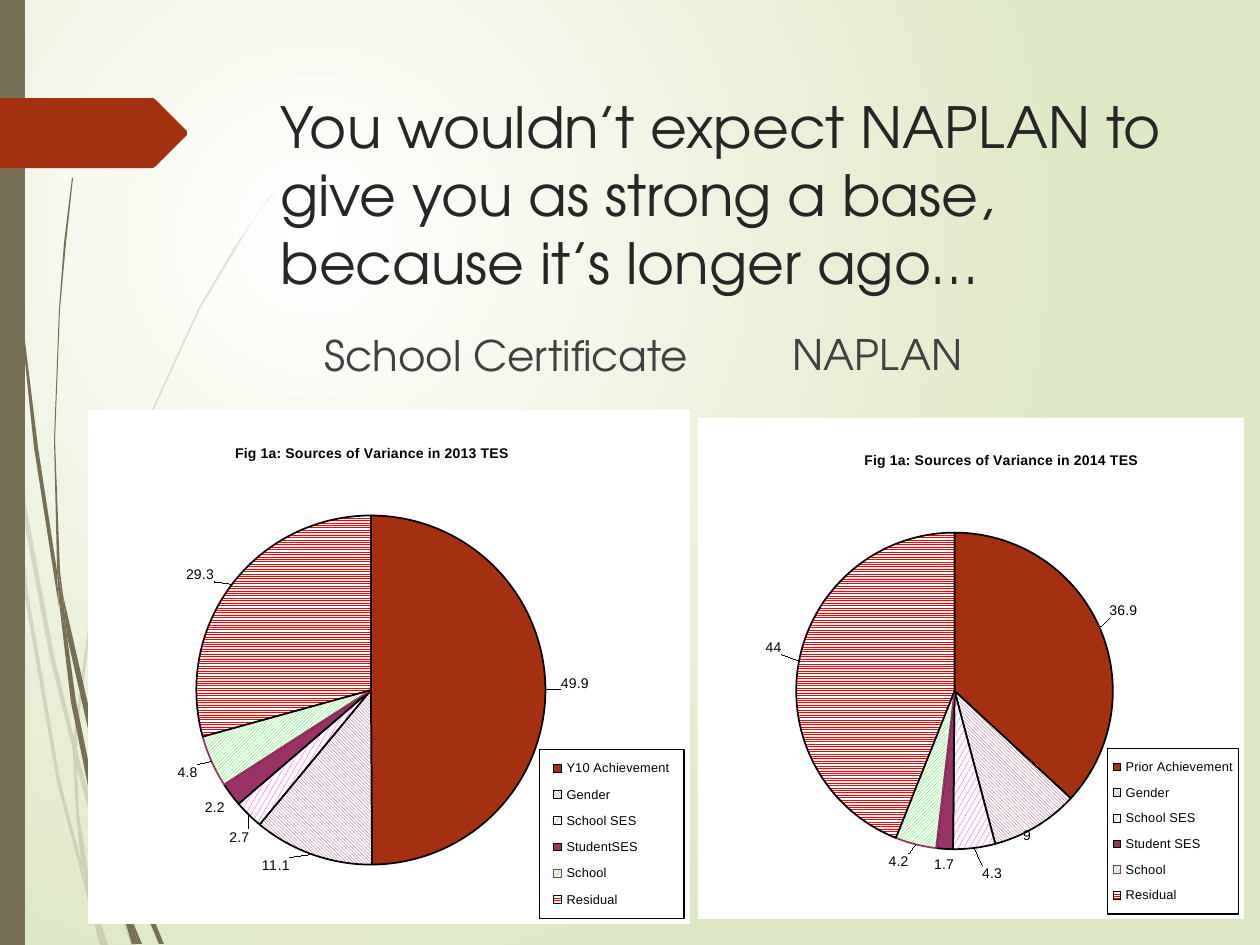
import dataclasses

import pptx
import pptx.chart.data
import pptx.dml.color
import pptx.enum.chart
import pptx.enum.dml
import pptx.enum.shapes
import pptx.enum.text
import pptx.oxml
import pptx.oxml.ns
import pptx.util

EMU_PER_PX = 914400 / 126
COLORS = {
    "white": "FFFFFF", "black": "000000", "pale": "DFE8C4", "olive": "766F54",
    "rust": "A53010", "title": "262626", "body": "404040",
    "plum": "993366", "magenta": "FF00FF", "green": "00FF00", "red": "FF0000",
}
HEADING_FONT, CHART_FONT = "TeX Gyre Adventor", "Arial"
PLOT_LAYOUT = (0.18, 0.18, 0.58, 0.73)
LEGEND_LAYOUT = (0.75, 0.66, 0.24, 0.33)

# Decorative grass blades: outlines in px
FAINT_BLADES = [
    [(10, 441), (8, 406), (0, 355), (0, 377), (9, 433)],
    [(50, 658), (74, 755), (74, 738), (54, 655), (13, 435), (15, 474)],
    [(81, 765), (77, 751), (77, 769), (107, 874), (131, 945), (136, 945), (111, 872)],
    [(105, 945), (108, 945), (92, 896)],
    [(81, 861), (60, 780), (28, 591), (15, 474), (10, 441), (24, 592), (57, 782),
     (81, 873), (88, 900), (87, 891)],
    [(73, 755), (76, 814), (81, 861), (84, 872), (92, 896), (91, 890), (79, 814),
     (77, 769), (77, 766)],
    [(77, 736), (96, 582), (140, 440), (200, 309), (236, 249), (253, 220), (273, 194),
     (273, 193), (253, 220), (234, 248), (199, 307), (139, 438), (94, 581), (74, 736),
     (74, 738), (77, 751)],
    [(88, 900), (100, 945), (103, 945)],
    [(77, 766), (77, 769), (77, 751), (74, 738), (73, 755)],
    [(84, 872), (82, 861), (87, 891), (88, 900), (103, 945), (105, 945), (92, 896)],
]
SOLID_BLADES = [
    [(6, 139), (18, 294), (34, 447), (58, 601), (59, 606), (57, 576), (57, 571),
     (38, 447), (19, 292), (8, 137), (5, 60), (4, 0), (3, 0), (4, 60)],
    [(92, 746), (111, 813), (111, 798), (111, 795), (97, 743), (63, 595), (67, 636)],
    [(118, 818), (115, 808), (115, 827), (137, 892), (159, 944), (164, 944), (142, 890)],
    [(115, 871), (102, 828), (76, 701), (67, 636), (59, 601), (71, 702), (97, 830),
     (116, 892), (122, 910), (121, 903)],
    [(63, 595), (60, 571), (55, 440), (60, 309), (66, 243), (73, 178), (72, 178),
     (64, 243), (59, 309), (54, 440), (57, 566), (62, 595)],
    [(139, 944), (142, 944), (126, 906)],
    [(59, 601), (67, 636), (63, 595), (62, 595), (57, 566), (57, 571)],
    [(115, 798), (130, 696), (165, 600), (213, 512), (241, 471), (256, 452), (272, 433),
     (271, 433), (256, 451), (241, 470), (212, 510), (163, 597), (127, 694), (111, 795),
     (115, 808)],
    [(122, 910), (132, 944), (136, 944)],
    [(111, 813), (115, 871), (121, 890), (126, 906), (126, 902), (115, 827), (113, 820)],
    [(111, 813), (113, 820), (115, 827), (115, 808), (111, 795), (111, 798)],
    [(121, 890), (115, 871), (121, 903), (122, 910), (136, 944), (139, 944), (126, 906)],
]
TITLE_ARROW = [(0, 98), (153, 98), (156, 100), (187, 131), (187, 135), (156, 166),
               (153, 168), (0, 168)]


@dataclasses.dataclass
class Label:
    text: str
    box: tuple[int, int, int, int]
    size: float
    color: str
    anchor: pptx.enum.text.MSO_ANCHOR
    space_before: int = 0


@dataclasses.dataclass
class Pie:
    title: str
    box: tuple[int, int, int, int]
    title_left: float
    categories: list[str]
    values: list[float]
    number_format: str
    label_shifts: dict[int, tuple[int, int]]  # px, by slice


@dataclasses.dataclass
class Slice:
    color: str
    pattern: str = ""
    outline: str = "black"


TOP, BOTTOM = pptx.enum.text.MSO_ANCHOR.TOP, pptx.enum.text.MSO_ANCHOR.BOTTOM
LABELS = [
    Label("You wouldn’t expect NAPLAN to give you as strong a base, because it’s longer ago…",
          (268, 86, 908, 176), 32.4, "title", TOP),
    Label("School Certificate", (312, 307, 396, 79), 24, "body", BOTTOM, 10),
    Label("NAPLAN", (780, 306, 396, 79), 24, "body", BOTTOM, 10),
]
PIES = [
    Pie("Fig 1a: Sources of Variance in 2013 TES", (88, 410, 602, 514), 0.24,
        ["Y10 Achievement", "Gender", "School SES", "StudentSES", "School", "Residual"],
        [49.9, 11.1, 2.7, 2.2, 4.8, 29.3], "0.0",
        {0: (8, -6), 1: (-20, -4), 2: (6, 9), 4: (-7, 0), 5: (-12, 2)}),
    Pie("Fig 1a: Sources of Variance in 2014 TES", (698, 418, 546, 501), 0.3,
        ["Prior Achievement", "Gender", "School SES", "Student SES", "School", "Residual"],
        [36.9, 9, 4.3, 1.7, 4.2, 44], "General",
        {0: (3, -6), 1: (-17, -5), 2: (7, 10), 4: (-5, 2), 5: (-10, -5)}),
]
SLICES = [
    Slice("rust"), Slice("plum", "LIGHT_DOWNWARD_DIAGONAL"),
    Slice("magenta", "LARGE_CONFETTI"), Slice("plum"),
    Slice("green", "LIGHT_UPWARD_DIAGONAL", "plum"), Slice("red", "LIGHT_HORIZONTAL"),
]


def px(length: int) -> int:
    return round(length * EMU_PER_PX)


def rgb(name: str) -> pptx.dml.color.RGBColor:
    return pptx.dml.color.RGBColor.from_string(COLORS[name])


def qn(tag: str) -> str:
    return pptx.oxml.ns.qn(tag)


def xml(source: str):
    tag, rest = source.split(">", 1)
    return pptx.oxml.parse_xml(f"{tag} {pptx.oxml.ns.nsdecls('a', 'c')}>{rest}")


def set_font(font, size: float, color: str, name: str, bold: bool = False) -> None:
    font.size, font.name, font.bold = pptx.util.Pt(size), name, bold
    font.color.rgb = rgb(color)


def paint(shape, color: str, opacity: int = 100) -> None:
    shape.shadow.inherit = False
    shape.fill.solid()
    shape.fill.fore_color.rgb = rgb(color)
    shape.line.fill.background()
    if opacity < 100:
        shape.element.find(".//" + qn("a:srgbClr")).append(
            xml(f'<a:alpha></a:alpha>'))
        shape.element.find(".//" + qn("a:alpha")).set("val", str(opacity * 1000))


def add_outline(slide, points: list[tuple[int, int]], color: str, opacity: int = 100) -> None:
    builder = slide.shapes.build_freeform(*points[0], scale=EMU_PER_PX)
    builder.add_line_segments(points[1:], close=True)
    paint(builder.convert_to_shape(), color, opacity)


def add_label(slide, label: Label) -> None:
    frame = slide.shapes.add_textbox(*map(px, label.box)).text_frame
    frame.word_wrap, frame.vertical_anchor = True, label.anchor
    paragraph = frame.paragraphs[0]
    paragraph.space_before = pptx.util.Pt(label.space_before)
    run = paragraph.add_run()
    run.text = label.text
    set_font(run.font, label.size, label.color, HEADING_FONT)


def manual_layout(values: tuple, modes: str = ""):
    parts = "".join(f'<c:{tag} val="{value:.4f}"/>' for tag, value in zip("xywh", values))
    return xml(f"<c:layout><c:manualLayout>{modes}{parts}</c:manualLayout></c:layout>")


def add_pie(slide, pie: Pie) -> None:
    data = pptx.chart.data.CategoryChartData(number_format=pie.number_format)
    data.categories = pie.categories
    data.add_series("Series 1", pie.values)
    chart = slide.shapes.add_chart(
        pptx.enum.chart.XL_CHART_TYPE.PIE, *map(px, pie.box), data).chart
    set_font(chart.font, 8, "black", CHART_FONT)
    run = chart.chart_title.text_frame.paragraphs[0].add_run()
    run.text = pie.title
    set_font(run.font, 8, "black", CHART_FONT, bold=True)
    chart.has_legend = True
    chart.legend.position = pptx.enum.chart.XL_LEGEND_POSITION.RIGHT
    chart.legend.include_in_layout = False
    set_font(chart.legend.font, 7.3, "black", CHART_FONT)

    # Slices and value labels
    plot = chart.plots[0]
    plot.vary_by_categories = True
    series = plot.series[0]
    outside = pptx.enum.chart.XL_LABEL_POSITION.OUTSIDE_END
    labels = series.data_labels
    labels.show_value, labels.position = True, outside
    labels.number_format, labels.number_format_is_linked = pie.number_format, False
    set_font(labels.font, 8, "black", CHART_FONT)
    for index, style in enumerate(SLICES):
        point = series.points[index]
        fill, line = point.format.fill, point.format.line
        if style.pattern:
            fill.patterned()
            fill.pattern = getattr(pptx.enum.dml.MSO_PATTERN_TYPE, style.pattern)
            fill.back_color.rgb = rgb("white")
        else:
            fill.solid()
        fill.fore_color.rgb = rgb(style.color)
        line.color.rgb, line.width = rgb(style.outline), pptx.util.Pt(1)
        if index in pie.label_shifts:
            point.data_label.position = outside
            set_font(point.data_label.font, 8, "black", CHART_FONT)
    for label in chart.element.iter(qn("c:dLbl")):
        index = label.find(qn("c:idx"))
        shift_x, shift_y = pie.label_shifts[int(index.get("val"))]
        index.addnext(manual_layout((shift_x / pie.box[2], shift_y / pie.box[3])))

    # Placement of title, plot and legend; white ground and legend frame
    edges = '<c:xMode val="edge"/><c:yMode val="edge"/>'
    root = chart.element.find(qn("c:chart"))
    legend, area = root.find(qn("c:legend")), root.find(qn("c:plotArea"))
    for parent in (legend, area, root.find(qn("c:title"))):
        for layout in parent.findall(qn("c:layout")):
            parent.remove(layout)
    root.find(qn("c:title")).find(qn("c:tx")).addnext(
        manual_layout((pie.title_left, 0.06), edges))
    area.insert(0, manual_layout(PLOT_LAYOUT, '<c:layoutTarget val="inner"/>' + edges))
    legend.find(qn("c:legendPos")).addnext(manual_layout(LEGEND_LAYOUT, edges))
    for parent, line in ((legend, "black"), (chart.element, "")):
        stroke = f'<a:solidFill><a:srgbClr val="{COLORS[line]}"/></a:solidFill>' if line else "<a:noFill/>"
        parent.find(qn("c:txPr")).addprevious(xml(
            f'<c:spPr><a:solidFill><a:srgbClr val="{COLORS["white"]}"/></a:solidFill>'
            f'<a:ln w="9525">{stroke}</a:ln></c:spPr>'))


def set_background(slide) -> None:
    fill = slide.background.fill
    fill.gradient()
    for stop, (position, color) in zip(fill.gradient_stops, ((0, "white"), (1, "pale"))):
        stop.position, stop.color.rgb = position, rgb(color)
    linear = slide.element.find(".//" + qn("a:lin"))
    radial = xml('<a:path><a:fillToRect l="50000" t="50000" r="100000" b="100000"/></a:path>')
    radial.set("path", "circle")
    linear.getparent().replace(linear, radial)


def main() -> None:
    presentation = pptx.Presentation()
    presentation.slide_width, presentation.slide_height = px(1260), px(945)
    slide = presentation.slides.add_slide(presentation.slide_layouts[6])
    set_background(slide)
    # Decoration
    for blades, opacity in ((FAINT_BLADES, 20), (SOLID_BLADES, 100)):
        for points in blades:
            add_outline(slide, points, "olive", opacity)
    paint(slide.shapes.add_shape(pptx.enum.shapes.MSO_SHAPE.RECTANGLE, 0, 0, px(25), px(945)), "olive")
    add_outline(slide, TITLE_ARROW, "rust")
    # Headings and charts
    for label in LABELS:
        add_label(slide, label)
    for pie in PIES:
        add_pie(slide, pie)
    presentation.save("out.pptx")


if __name__ == "__main__":
    main()
